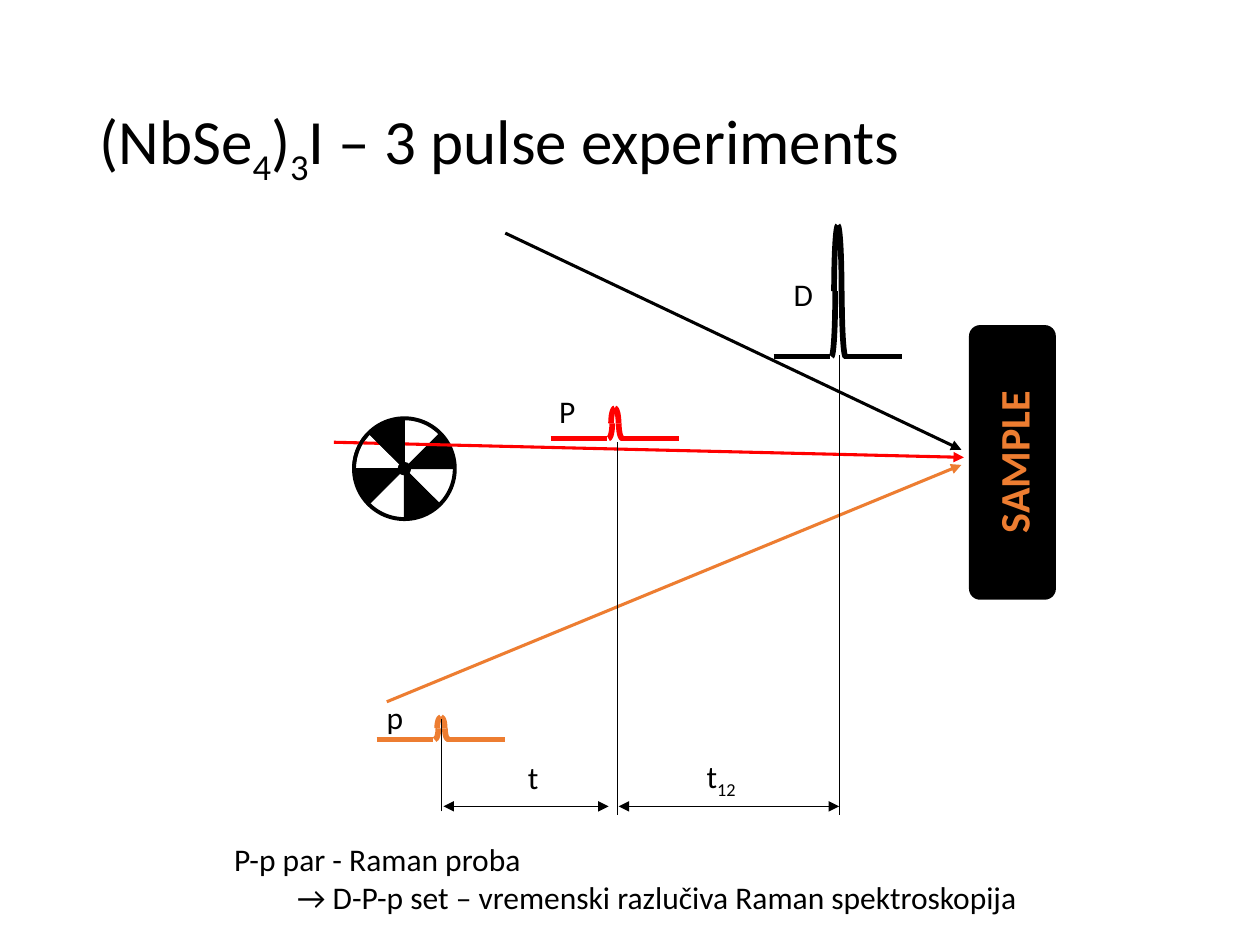
from lxml import etree
from pptx import Presentation
from pptx.dml.color import RGBColor
from pptx.enum.shapes import MSO_CONNECTOR, MSO_SHAPE
from pptx.enum.text import MSO_ANCHOR, MSO_AUTO_SIZE
from pptx.oxml.ns import qn
from pptx.util import Inches, Pt

LINE = MSO_CONNECTOR.STRAIGHT
ARC, PIE, OVAL = MSO_SHAPE.ARC, MSO_SHAPE.PIE, MSO_SHAPE.OVAL
ROUND = MSO_SHAPE.ROUNDED_RECTANGLE
MIDDLE, GROW = MSO_ANCHOR.MIDDLE, MSO_AUTO_SIZE.SHAPE_TO_FIT_TEXT
BLACK, RED, ORANGE = "000000", "FF0000", "ED7D31"
FONT = "Calibri"


def paint(color):
    """Turn a hex string into a colour."""
    return RGBColor.from_string(color)


def shape(shapes, kind, box, fill=None, line=None, turn=0, flip=False, adjust=()):
    """Add a preset shape with its fill, outline and turn."""
    item = shapes.add_shape(kind, *map(Inches, box))
    item.shadow.inherit = False
    item.rotation = turn
    for index, value in enumerate(adjust):
        item.adjustments[index] = value
    if flip:
        item._element.spPr.find(qn("a:xfrm")).set("flipH", "1")
    if fill:
        item.fill.solid()
        item.fill.fore_color.rgb = paint(fill)
    else:
        item.fill.background()
    if line:
        color, width = line
        item.line.color.rgb = paint(color)
        item.line.width = Pt(width)
    else:
        item.line.fill.background()
    return item


def stroke(shapes, start, end, color=BLACK, width=0.5, heads=()):
    """Add a straight line, with arrowheads if asked."""
    item = shapes.add_connector(LINE, *map(Inches, start + end))
    item.line.color.rgb = paint(color)
    item.line.width = Pt(width)
    for head in heads:
        etree.SubElement(item.line._ln, qn("a:" + head)).set("type", "triangle")
    etree.SubElement(item._element.spPr, qn("a:effectLst"))


def style(runs, size, color=BLACK, bold=False):
    """Format runs, with every second one as a subscript."""
    for index, run in enumerate(runs):
        run.font.name = FONT
        run.font.size = Pt(size)
        run.font.bold = bold
        run.font.color.rgb = paint(color)
        if index % 2:
            run._r.get_or_add_rPr().set("baseline", "-25000")


def label(shapes, box, parts, size=18, color=BLACK, bold=False):
    """Add a text box of one paragraph from plain and subscript parts."""
    item = shapes.add_textbox(*map(Inches, box))
    item.text_frame.word_wrap = False
    item.text_frame.auto_size = GROW
    para = item.text_frame.paragraphs[0]
    for part in parts:
        para.add_run().text = part
    style(para.runs, size, color, bold)
    return item


def title(shapes, box):
    """Add the slide title."""
    parts = ["(NbSe", "4", ")", "3", "I – 3 pulse experiments"]
    item = label(shapes, box, parts, 36)
    frame = item.text_frame
    frame.word_wrap = True
    frame.auto_size = MSO_AUTO_SIZE.NONE
    frame.vertical_anchor = MIDDLE
    frame.paragraphs[0].line_spacing = 0.9
    item.height = Inches(box[3])


def pulse(slide, mid, top, tall, color):
    """Draw a pulse on its base line, centred on mid."""
    shapes = slide.add_group_shape().shapes
    base = top + tall
    for left, turn, flip in (-0.03, 0, False), (-0.03, 0, True), (0.03, 180, False), (-0.08, 180, True):
        shape(shapes, ARC, (mid + left, top, 0.06, tall), None, (color, 3.25), turn, flip)
    for near, far in (0.05, 0.51), (-0.51, -0.06):
        stroke(shapes, (mid + near, base), (mid + far, base), color, 3)


def beam(shapes, start, end, color):
    """Draw a beam that points at the sample."""
    stroke(shapes, start, end, color, 1.75, ["tailEnd"])


def blade(shapes, box, turn):
    """Add one dark blade of the chopper wheel."""
    shape(shapes, PIE, box, BLACK, (BLACK, 0.5), turn, False, (134.9, 162))


def rim(shapes, box):
    """Draw the part of the wheel behind the beam."""
    shape(shapes, OVAL, box, None, (BLACK, 2.25))
    blade(shapes, box, 90)


def wheel(shapes, box):
    """Draw the part of the wheel in front of the beam."""
    left, top, size, _ = box
    midx, midy, arm = left + size / 2, top + size / 2, 0.28
    stroke(shapes, (midx - arm, midy - arm), (midx + arm, midy + arm))
    stroke(shapes, (midx, top), (midx, top + size))
    stroke(shapes, (left + size, midy), (left, midy))
    for turn in 0, 180, 270:
        blade(shapes, box, turn)
    shape(shapes, OVAL, (midx - 0.05, midy - 0.05, 0.1, 0.1), BLACK, (BLACK, 0.5))
    shape(shapes, ARC, box, None, (BLACK, 2), 0, True, (190.88, 0))


def sample(shapes, box):
    """Draw the sample block."""
    shape(shapes, ROUND, box, BLACK, adjust=[0.128])


def delays(slide, box):
    """Mark the delays between the three pulses."""
    shapes = slide.add_group_shape().shapes
    left, top, wide, tall = box
    right, base, mid = left + wide, top + tall, left + 1.4
    row = base - 0.07
    stroke(shapes, (mid, top + 0.69), (mid, base))
    stroke(shapes, (right, top), (right, base))
    for start, end in (mid + 0.01, right), (left + 0.02, mid - 0.07):
        stroke(shapes, (start, row), (end, row), heads=["headEnd", "tailEnd"])
    stroke(shapes, (left, base - 0.03), (left, top + 2.89))
    label(shapes, (left + 2.01, row - 0.44, 0.46, 0.4), ["t", "12"])
    label(shapes, (left + 0.59, row - 0.43, 0.29, 0.4), ["t"])


def notes(shapes, box):
    """Add the two closing lines, the second one indented."""
    item = label(shapes, box, ["P-p par - Raman proba"])
    para = item.text_frame.add_paragraph()
    para.text = "→ D-P-p set – vremenski razlučiva Raman spektroskopija"
    para._p.get_or_add_pPr().set("marL", str(Inches(0.5)))
    style(para.runs, 18)


def main():
    """Build the slide and save it."""
    deck = Presentation()
    deck.slide_width, deck.slide_height = Inches(10), Inches(7.5)
    shapes = deck.slides.add_slide(deck.slide_layouts[6]).shapes
    disc = (2.81, 3.32, 0.8, 0.8)
    rim(shapes, disc)
    title(shapes, (0.69, 0.4, 8.62, 1.45))
    sample(shapes, (7.69, 2.58, 0.69, 2.18))
    pulse(shapes, 6.65, 1.79, 1.04, BLACK)
    beam(shapes, (4.01, 1.85), (7.63, 3.57), BLACK)
    name = label(shapes, (7.37, 3.41, 1.34, 0.5), ["SAMPLE"], 24, ORANGE, True)
    name.rotation = 270
    label(shapes, (6.2, 2.13, 0.36, 0.4), ["D"])
    pulse(shapes, 4.88, 3.24, 0.24, RED)
    beam(shapes, (2.65, 3.51), (7.65, 3.63), RED)
    label(shapes, (4.34, 3.06, 0.33, 0.4), ["P"])
    pulse(shapes, 3.5, 5.69, 0.18, ORANGE)
    beam(shapes, (3.07, 5.57), (7.63, 3.69), ORANGE)
    label(shapes, (2.97, 5.49, 0.34, 0.4), ["p"])
    wheel(shapes, disc)
    delays(shapes, (3.5, 2.82, 3.16, 3.65))
    notes(shapes, (1.76, 6.62, 6.49, 0.71))
    deck.save("out.pptx")


if __name__ == "__main__":
    main()
